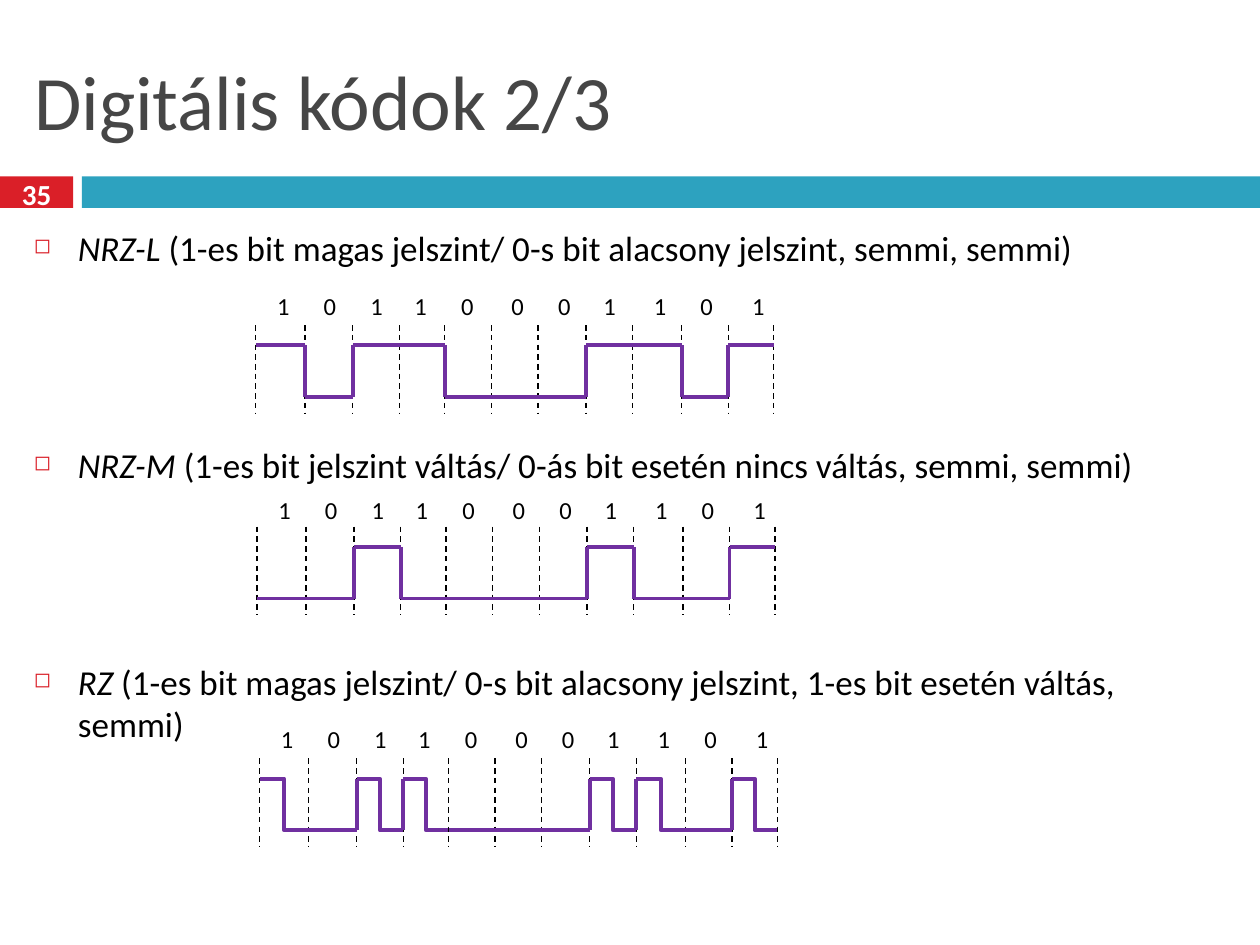
import pptx
import pptx.util
import pptx.dml.color
import pptx.enum.dml
import pptx.enum.shapes
import pptx.enum.text
import pptx.oxml
import pptx.oxml.ns
from lxml import etree

Inches, Pt = pptx.util.Inches, pptx.util.Pt
rgb = pptx.dml.color.RGBColor.from_string
qn = pptx.oxml.ns.qn
STRAIGHT = pptx.enum.shapes.MSO_CONNECTOR.STRAIGHT
ELBOW = pptx.enum.shapes.MSO_CONNECTOR.ELBOW
MIDDLE = pptx.enum.text.MSO_ANCHOR.MIDDLE


def add_text(paragraph, text, size, color, bold=False, italic=False):
    run = paragraph.add_run()
    run.text = text
    run.font.name = "Calibri"
    run.font.size = Pt(size)
    run.font.color.rgb = rgb(color)
    run.font.bold = bold
    run.font.italic = italic


def add_line(x1, y1, x2, y2, color, width, kind=STRAIGHT):
    line = slide.shapes.add_connector(
        kind, Inches(x1), Inches(y1), Inches(x2), Inches(y2))
    line.line.color.rgb = rgb(color)
    line.line.width = Pt(width)
    etree.SubElement(line._element.spPr, qn("a:effectLst"))
    return line


prs = pptx.Presentation()
prs.slide_width, prs.slide_height = Inches(10), Inches(7.5)
slide = prs.slides.add_slide(prs.slide_layouts[5])

# Header bars
for left, width, color in [(0, 0.58, "DA1F28"), (0.65, 9.35, "2DA2BF")]:
    bar = slide.shapes.add_shape(
        pptx.enum.shapes.MSO_SHAPE.RECTANGLE,
        Inches(left), Inches(1.4), Inches(width), Inches(0.25))
    bar.fill.solid()
    bar.fill.fore_color.rgb = rgb(color)
    bar.line.fill.background()
    bar.shadow.inherit = False

title = slide.shapes.title
title.left, title.top = Inches(0.17), Inches(0.25)
title.width, title.height = Inches(9.67), Inches(1.08)
title.text_frame.vertical_anchor = MIDDLE
title.text_frame.paragraphs[0].alignment = pptx.enum.text.PP_ALIGN.LEFT
add_text(title.text_frame.paragraphs[0], "Digitális kódok 2/3", 44, "464646")

# Descriptions of the codes
descriptions = [
    ("NRZ-L", " (1-es bit magas jelszint/ 0-s bit alacsony jelszint, semmi, semmi)", 7),
    ("NRZ-M", " (1-es bit jelszint váltás/ 0-ás bit esetén nincs váltás, semmi, semmi)", 100),
    ("RZ", " (1-es bit magas jelszint/ 0-s bit alacsony jelszint, 1-es bit esetén váltás, semmi)", 100),
]
body = slide.shapes.add_textbox(
    Inches(0.17), Inches(1.75), Inches(9.67), Inches(5.58)).text_frame
body.word_wrap = True
for i, (code, description, space_before) in enumerate(descriptions):
    paragraph = body.add_paragraph() if i else body.paragraphs[0]
    paragraph.space_before = Pt(space_before)
    properties = paragraph._p.get_or_add_pPr()
    properties.set("marL", str(Inches(0.35)))
    properties.set("indent", str(Inches(-0.35)))
    bullet_color = etree.SubElement(properties, qn("a:buClr"))
    etree.SubElement(bullet_color, qn("a:srgbClr"), val="DA1F28")
    etree.SubElement(properties, qn("a:buSzPct"), val="60000")
    etree.SubElement(properties, qn("a:buChar"), char="◻")
    add_text(paragraph, code, 20, "000000", italic=True)
    add_text(paragraph, description, 20, "000000")

# Signal diagrams: left, top, label top, signal level in each bit, return to zero
bits = "10110001101"
diagrams = [
    (2.03, 2.58, 2.26, bits, False),
    (2.04, 4.18, 3.88, "00100001001", False),
    (2.06, 6.02, 5.7, bits, True),
]
bit_edges = [0, 0.39, 0.77, 1.14, 1.5, 1.87, 2.24, 2.62, 2.99, 3.38, 3.75, 4.11]
digit_centers = [0.13, 0.5, 0.87, 1.22, 1.59, 1.99, 2.36, 2.72, 3.12, 3.49, 3.9]

for left, top, label_top, levels, returns_to_zero in diagrams:
    label = slide.shapes.add_textbox(
        Inches(left - 0.01), Inches(label_top), Inches(4.48), Inches(0.34)).text_frame
    label.word_wrap = True
    paragraph = label.paragraphs[0]
    tabs = etree.SubElement(paragraph._p.get_or_add_pPr(), qn("a:tabLst"))
    for center in digit_centers:
        etree.SubElement(tabs, qn("a:tab"), pos=str(Inches(center)), algn="ctr")
    add_text(paragraph, "".join("\t" + bit for bit in bits), 14, "000000")

    for edge in bit_edges:
        divider = add_line(left + edge, top, left + edge, top + 0.7, "000000", 0.79)
        divider.line.dash_style = pptx.enum.dml.MSO_LINE.DASH

    high, low = top + 0.16, top + 0.57
    previous = levels[0]
    for level, start, end in zip(levels, bit_edges, bit_edges[1:]):
        x1, x2 = left + start, left + end
        if level != previous:
            add_line(x1, high, x1, low, "7030A0", 2.25)
        y = high if level == "1" else low
        if returns_to_zero and level == "1":
            add_line(x1, high, x2, low, "7030A0", 2.25, ELBOW)
        else:
            add_line(x1, y, x2, y, "7030A0", 2.25)
        previous = "0" if returns_to_zero else level

slide_number = slide.shapes.add_textbox(
    Inches(0), Inches(1.37), Inches(0.58), Inches(0.33)).text_frame
slide_number.word_wrap = True
slide_number.vertical_anchor = MIDDLE
slide_number.paragraphs[0].alignment = pptx.enum.text.PP_ALIGN.CENTER
add_text(slide_number.paragraphs[0], "35", 16.6, "FFFFFF", bold=True)

prs.save("out.pptx")
